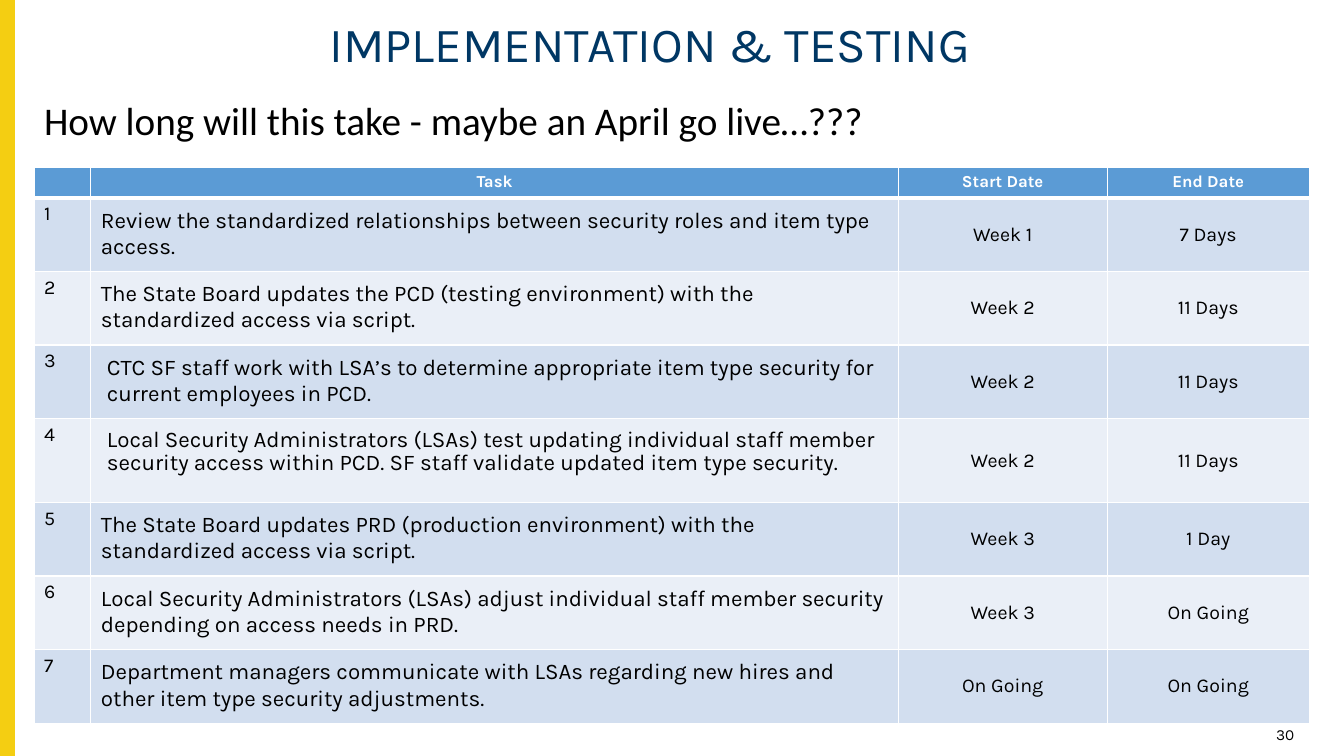
from lxml import etree
from pptx import Presentation
from pptx import util as u
from pptx.dml.color import RGBColor
from pptx.enum import shapes, text
from pptx.oxml.ns import qn

NAVY, YELLOW, WHITE, BLACK = "003764", "F4CE12", "FFFFFF", "000000"
HEADER_BLUE, BANDS = "5B9BD5", ("D2DEEF", "EAEFF7")
LEFT, CENTER, RIGHT = text.PP_ALIGN.LEFT, text.PP_ALIGN.CENTER, text.PP_ALIGN.RIGHT
TOP, MIDDLE = text.MSO_ANCHOR.TOP, text.MSO_ANCHOR.MIDDLE

COLUMN_WIDTHS = (1.43, 20.35, 5.26, 5.1)
HEADINGS = ("", "Task", "Start Date", "End Date")
TASKS = [
    ("Review the standardized relationships between security roles and item type access.",
     "Week 1", "7 Days"),
    ("The State Board updates the PCD (testing environment) with the standardized access via script.",
     "Week 2", "11 Days"),
    ("CTC SF staff work with LSA’s to determine appropriate item type security for "
     "current employees in PCD.", "Week 2", "11 Days"),
    ("Local Security Administrators (LSAs) test updating individual staff member security "
     "access within PCD. SF staff validate updated item type security.", "Week 2", "11 Days"),
    ("The State Board updates PRD (production environment) with the standardized access via script.",
     "Week 3", "1 Day"),
    ("Local Security Administrators (LSAs) adjust individual staff member security "
     "depending on access needs in PRD.", "Week 3", "On Going"),
    ("Department managers communicate with LSAs regarding new hires and other item type "
     "security adjustments.", "On Going", "On Going"),
]
INDENT = 0.15
# Paragraph formats of the tasks that differ from the rest
TASK_FORMATS = {3: {"indent": INDENT},
                4: {"indent": INDENT, "line_spacing": 0.9, "space_before": u.Pt(10)}}


def color(hex_value):
    return RGBColor.from_string(hex_value)


def apply(target, formats):
    for name, value in formats.items():
        setattr(target, name, value)


def write(frame, wording, size, hex_value, font="Karla", bold=False, indent=0, **formats):
    paragraph = frame.paragraphs[0]
    apply(paragraph, formats)
    if indent:
        paragraph._p.get_or_add_pPr().set("marL", str(u.Cm(indent)))
    if not wording:
        # An empty cell keeps the text size, so that its row stays low
        etree.SubElement(paragraph._p, qn("a:endParaRPr"), sz=str(size * 100))
        return
    run = paragraph.add_run()
    run.text = wording
    apply(run.font, {"name": font, "size": u.Pt(size), "bold": bold})
    run.font.color.rgb = color(hex_value)


def add_text(slide, place, wording, size, hex_value, anchor=TOP, **formats):
    frame = slide.shapes.add_textbox(*map(u.Cm, place)).text_frame
    apply(frame, {"word_wrap": True, "vertical_anchor": anchor})
    write(frame, wording, size, hex_value, **formats)


def add_side_bar(slide):
    side_bar = slide.shapes.add_shape(shapes.MSO_SHAPE.RECTANGLE, 0, 0, u.Cm(0.37), u.Cm(19.05))
    side_bar.shadow.inherit = False
    side_bar.fill.solid()
    side_bar.fill.fore_color.rgb = side_bar.line.color.rgb = color(YELLOW)
    side_bar.line.width = u.Pt(1)


def style_cell(cell, fill, bottom_width=1):
    # Borders come before the fill in the cell properties
    properties = cell._tc.get_or_add_tcPr()
    for side, width in (("L", 1), ("R", 1), ("T", 1), ("B", bottom_width)):
        border = etree.SubElement(properties, qn(f"a:ln{side}"), w=str(u.Pt(width)))
        solid = etree.SubElement(border, qn("a:solidFill"))
        etree.SubElement(solid, qn("a:srgbClr"), val=WHITE)
    cell.fill.solid()
    cell.fill.fore_color.rgb = color(fill)


def add_schedule(slide):
    # Task rows grow to fit their two lines
    heights = [0.76] + [1.65] * len(TASKS)
    heights[4] = 2.11
    schedule = slide.shapes.add_table(
        len(heights), len(HEADINGS), u.Cm(0.86), u.Cm(4.22),
        u.Cm(sum(COLUMN_WIDTHS)), u.Cm(sum(heights))).table
    for column, width in zip(schedule.columns, COLUMN_WIDTHS):
        column.width = u.Cm(width)
    for row, height in zip(schedule.rows, heights):
        row.height = u.Cm(height)

    # Heading row
    for column, heading in enumerate(HEADINGS):
        cell = schedule.cell(0, column)
        style_cell(cell, HEADER_BLUE, bottom_width=3)
        write(cell.text_frame, heading, 12, WHITE, bold=True, alignment=CENTER)

    # Task rows: number, task, start and end
    for number, (task, start, end) in enumerate(TASKS, 1):
        number_cell, task_cell, *date_cells = schedule.rows[number].cells
        for cell in (number_cell, task_cell, *date_cells):
            style_cell(cell, BANDS[(number - 1) % 2])
        write(number_cell.text_frame, str(number), 14, BLACK)
        apply(task_cell, {"margin_top": u.Cm(0.25), "margin_bottom": u.Cm(0.25)})
        write(task_cell.text_frame, task, 16, BLACK, **TASK_FORMATS.get(number, {}))
        for cell, date in zip(date_cells, (start, end)):
            cell.vertical_anchor = MIDDLE
            write(cell.text_frame, date, 14, BLACK, alignment=CENTER)


def main():
    deck = Presentation()
    apply(deck, {"slide_width": u.Cm(33.87), "slide_height": u.Cm(19.05)})
    slide = deck.slides.add_slide(deck.slide_layouts[6])

    # Frame of the page
    add_side_bar(slide)
    add_text(slide, (31.17, 18.14, 1.7, 0.53), "30", 11, BLACK, alignment=RIGHT)

    # Title, schedule and question
    add_text(slide, (7.9, 0.43, 18.06, 1.47), "IMPLEMENTATION & TESTING", 35, NAVY,
             anchor=MIDDLE, indent=INDENT, line_spacing=0.9)
    add_schedule(slide)
    add_text(slide, (0.86, 2.31, 31.67, 1.45),
             "How long will this take - maybe an April go live…???", 28, BLACK,
             font="Calibri", alignment=LEFT)
    deck.save("out.pptx")


if __name__ == "__main__":
    main()
